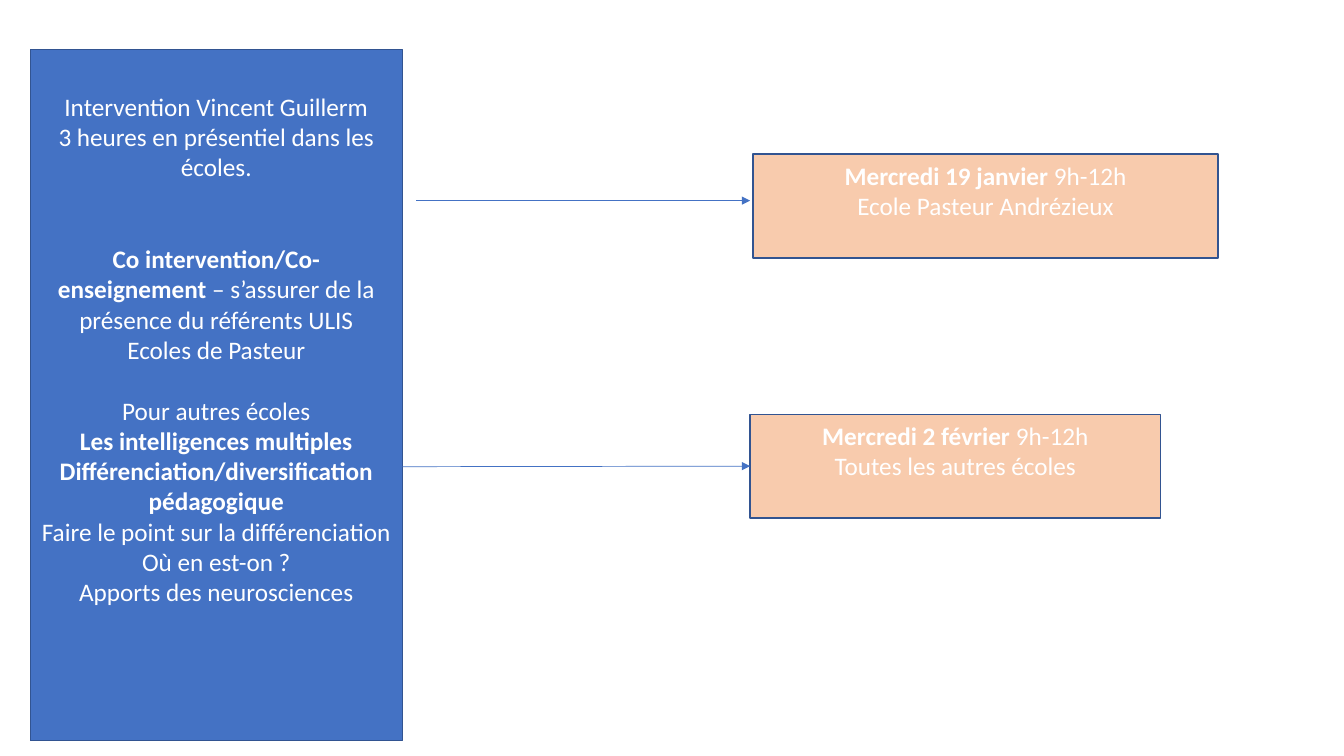
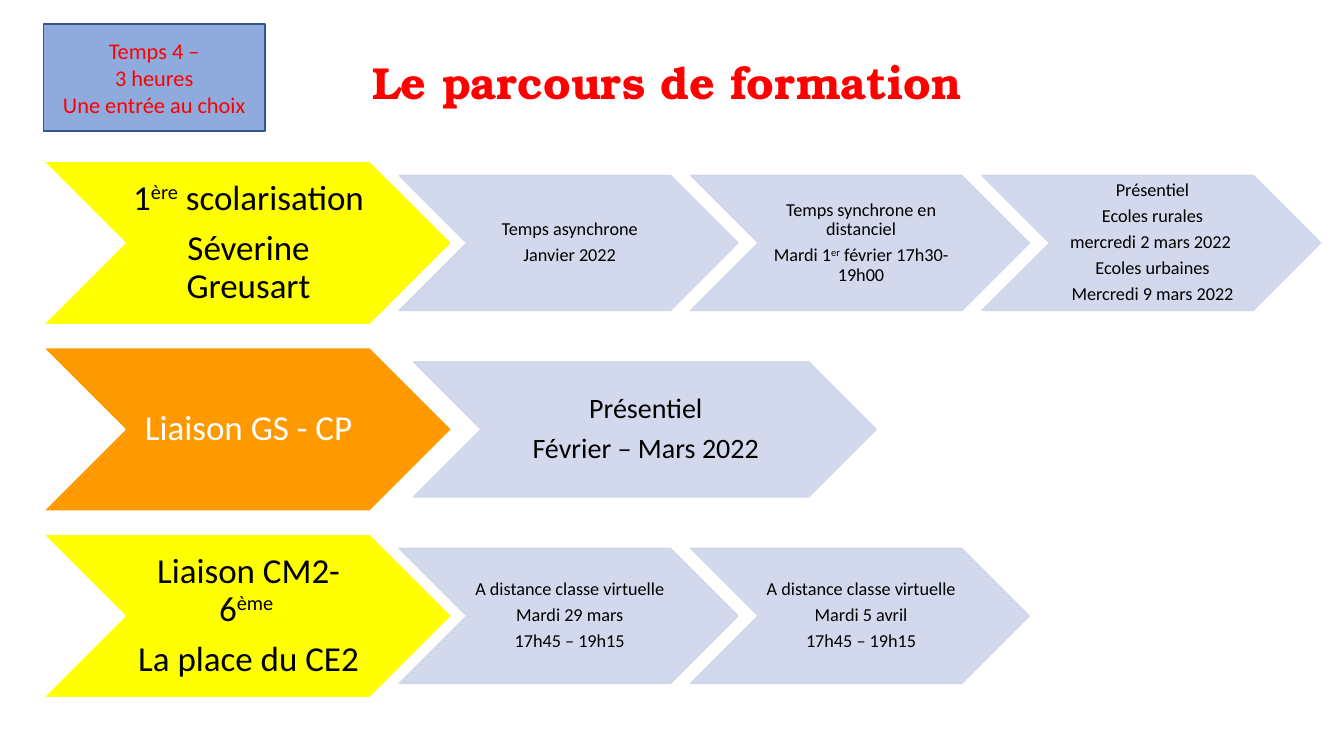
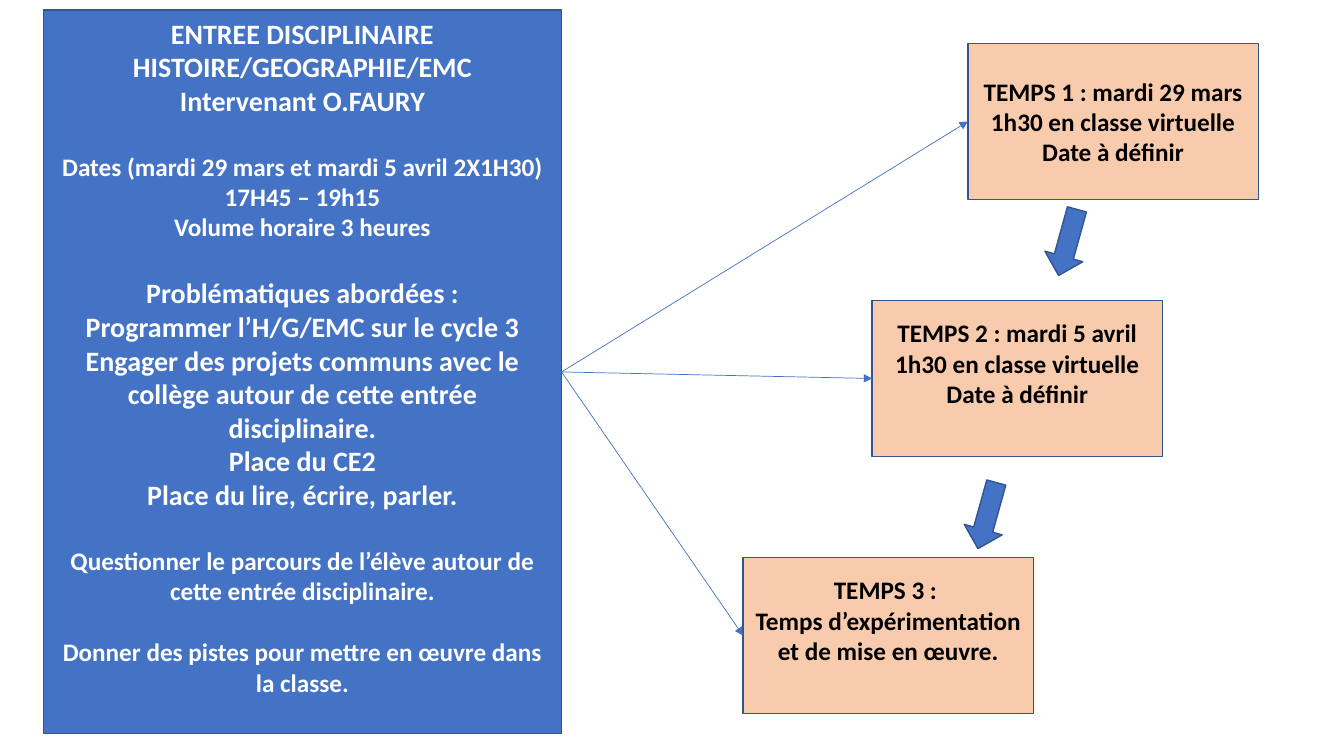
"""Build three slides on a teacher training path: sessions, choices and schedule."""
from dataclasses import dataclass

from lxml import etree
from pptx import Presentation
from pptx import util as u
from pptx.dml.color import RGBColor
from pptx.enum import shapes, text
from pptx.oxml.ns import qn


@dataclass(frozen=True)
class Theme:
    blue: str = "4472C4"
    outline: str = "325491"
    peach: str = "F8CBAD"
    sky: str = "8FAADC"
    pale: str = "CFD5EA"
    yellow: str = "FFFF00"
    orange: str = "FF9900"
    red: str = "FF0000"
    white: str = "FFFFFF"
    black: str = "000000"
    font: str = "Calibri"
    title_font: str = "TeX Gyre Bonum"
    title: int = 32
    head: int = 25
    large: int = 20
    body: int = 18
    label: int = 16
    small: int = 13
    leading: float = 1.22


T = Theme()
SHAPE = shapes.MSO_SHAPE

# Text marks: *bold*, ^superscript^. A tuple is (text, size, gap above in points).
INTERVENTION = [
    "Intervention Vincent Guillerm",
    "3 heures en présentiel dans les écoles.",
    ("*Co intervention/Co-enseignement *– s’assurer de la présence du référents ULIS", T.body, 2 * T.body),
    "Ecoles de Pasteur",
    ("Pour autres écoles", T.body, T.body),
    "*Les intelligences multiples*",
    "*Différenciation/diversification pédagogique*",
    "Faire le point sur la différenciation",
    "Où en est-on ?",
    "Apports des neurosciences",
]
SESSIONS = [
    ((7.47, 1.53, 4.61, 1.03), ["*Mercredi 19 janvier* 9h-12h", "Ecole Pasteur Andrézieux"]),
    ((7.44, 4.11, 4.07, 1.03), ["*Mercredi 2 février* 9h-12h", "Toutes les autres écoles"]),
]
CHOICE = ["Temps 4 –", "3 heures", "Une entrée au choix"]
PATHS = [
    (T.yellow, T.black, ["1^ère^ scolarisation", "Séverine Greusart"], [
        ["Temps asynchrone", "Janvier 2022"],
        ["Temps synchrone en distanciel", "Mardi 1^er^ février 17h30-19h00"],
        ["Présentiel", "Ecoles rurales", "mercredi 2 mars 2022 ", "Ecoles urbaines", "Mercredi 9 mars 2022"],
    ]),
    (T.orange, T.white, ["Liaison GS - CP"], [["Présentiel", "Février – Mars 2022"]]),
    (T.yellow, T.black, ["Liaison CM2- 6^ème ^", "La place du CE2"], [
        ["A distance classe virtuelle", f"Mardi {day}", "17h45 – 19h15"] for day in ("29 mars", "5 avril")
    ]),
]
SUBJECT = [
    "ENTREE DISCIPLINAIRE",
    "HISTOIRE/GEOGRAPHIE/EMC",
    "Intervenant O.FAURY",
    ("Dates (mardi 29 mars et mardi 5 avril 2X1H30) 17H45 – 19h15", T.body, T.large),
    ("Volume horaire 3 heures", T.body, 0),
    ("Problématiques abordées :", T.large, T.large),
    "Programmer l’H/G/EMC sur le cycle 3",
    "Engager des projets communs avec le collège autour de cette entrée disciplinaire.",
    "Place du CE2",
    "Place du lire, écrire, parler.",
    ("Questionner le parcours de l’élève autour de cette entrée disciplinaire.", T.body, T.large),
    ("Donner des pistes pour mettre en œuvre dans la classe.", T.body, T.body),
]
STAGES = [
    (9.6, ["TEMPS 1 : mardi 29 mars", "1h30 en classe virtuelle", "Date à définir"], 0),
    (8.65, ["TEMPS 2 : mardi 5 avril", "1h30 en classe virtuelle", "Date à définir"], T.body),
    (7.37, ["TEMPS 3 : ", "Temps d’expérimentation et de mise en œuvre."], T.body),
]
STAGE_ARROWS = [(10.25, 2.21), (9.45, 4.92)]


def rgb(color):
    return RGBColor.from_string(color)


def write(tf, lines, size, color, bold=None, font=T.font, spacing=None, after=0):
    tf.word_wrap = True
    for i, line in enumerate(lines):
        words, pts, gap = line if isinstance(line, tuple) else (line, size, 0)
        p = tf.paragraphs[0] if i == 0 else tf.add_paragraph()
        p.alignment = text.PP_ALIGN.CENTER
        p.line_spacing = spacing
        p.space_before = u.Pt(gap * T.leading)
        p.space_after = u.Pt(after * pts)
        p.font.name, p.font.size, p.font.bold = font, u.Pt(pts), bold
        p.font.color.rgb = rgb(color)
        for j, part in enumerate(words.split("*")):
            for k, piece in enumerate(part.split("^")):
                if piece:
                    r = p.add_run()
                    r.text = piece
                    if j % 2:
                        r.font.bold = True
                    if k % 2:
                        r.font._element.set("baseline", "30000")


def add(s, kind, at, fill, line=T.outline):
    sp = s.shapes.add_shape(kind, *map(u.Inches, at))
    sp.shadow.inherit = False
    sp.fill.solid()
    sp.fill.fore_color.rgb = rgb(fill)
    sp.line.color.rgb = rgb(line)
    sp.line.width = u.Pt(1)
    return sp


def box(s, at, fill, lines, size=T.body, color=T.white, bold=None, tail=0):
    sp = add(s, SHAPE.RECTANGLE, at, fill)
    tf = sp.text_frame
    tf.vertical_anchor = text.MSO_ANCHOR.MIDDLE
    tf.margin_bottom = u.Inches(0.05) + u.Pt(tail * T.leading)
    write(tf, lines, size, color, bold)
    return sp


def chevron(s, at, fill, line, lines, size, color, alpha=None):
    sp = add(s, SHAPE.CHEVRON, at, fill, line)
    if alpha:
        for clr in sp._element.spPr.iter(qn("a:srgbClr")):
            etree.SubElement(clr, qn("a:alpha")).set("val", str(alpha * 1000))
    tf = sp.text_frame
    tf.vertical_anchor = text.MSO_ANCHOR.MIDDLE
    tf.margin_left, tf.margin_right = u.Inches(0.02), 0
    tf.margin_top = tf.margin_bottom = u.Inches(0.01)
    write(tf, lines, size, color, spacing=0.9, after=0.35)


def arrow(s, start=(0, 0), end=(0, 0), source=None, target=None):
    c = s.shapes.add_connector(shapes.MSO_CONNECTOR.STRAIGHT, *map(u.Inches, (*start, *end)))
    if source:
        c.begin_connect(source, 3)
    if target:
        c.end_connect(target, 1)
    c.line.color.rgb = rgb(T.blue)
    c.line.width = u.Pt(0.5)
    etree.SubElement(c.line._get_or_add_ln(), qn("a:tailEnd")).set("type", "triangle")
    etree.SubElement(c._element.spPr, qn("a:effectLst"))


def intervention_slide(s):
    box(s, (0.3, 0.49, 3.69, 6.86), T.blue, INTERVENTION, tail=3 * T.body)
    _, second = [box(s, at, T.peach, lines, tail=T.body) for at, lines in SESSIONS]
    arrow(s, (4.13, 1.99), (7.44, 1.99))
    arrow(s, (3.99, 4.63), target=second)


def path_slide(s):
    box(s, (0.43, 0.24, 2.2, 1.06), T.sky, CHOICE, T.label, T.red)
    title = s.shapes.add_textbox(*map(u.Inches, (0.87, 0.55, 11.5, 0.72)))
    write(title.text_frame, ["Le parcours de formation"], T.title, T.red, True, T.title_font, 0.9)
    left, top, pitch, head_h, step_h = 0.43, 1.6, 1.85, 1.62, 1.34
    head_w = 2.5 * head_h
    for row, (fill, color, head, steps) in enumerate(PATHS):
        y = top + row * pitch
        chevron(s, (left, y, head_w, head_h), fill, T.white, head, T.head, color)
        single = len(steps) == 1
        w, overlap, size = (4.59, 0.38, T.large) if single else (3.36, 0.52, T.small)
        for i, lines in enumerate(steps):
            x = left + head_w - overlap + i * (w - 0.47)
            at = (x, y + (head_h - step_h) / 2, w, step_h)
            chevron(s, at, T.pale, T.pale, lines, size, T.black, alpha=90)


def subject_slide(s):
    subject = box(s, (0.43, 0.1, 5.14, 7.18), T.blue, SUBJECT, T.large, bold=True, tail=T.body)
    for i, (x, lines, tail) in enumerate(STAGES):
        stage = box(s, (x, 0.43 + 2.55 * i, 2.88, 1.55), T.peach, lines, color=T.black, bold=True, tail=tail)
        arrow(s, source=subject, target=stage)
    for x, y in STAGE_ARROWS:
        add(s, SHAPE.RIGHT_ARROW, (x, y, 0.68, 0.39), T.blue).rotation = 105.5


def main():
    prs = Presentation()
    prs.slide_width, prs.slide_height = u.Inches(13.33), u.Inches(7.5)
    for build in (intervention_slide, path_slide, subject_slide):
        build(prs.slides.add_slide(prs.slide_layouts[6]))
    prs.save("out.pptx")


if __name__ == "__main__":
    main()
